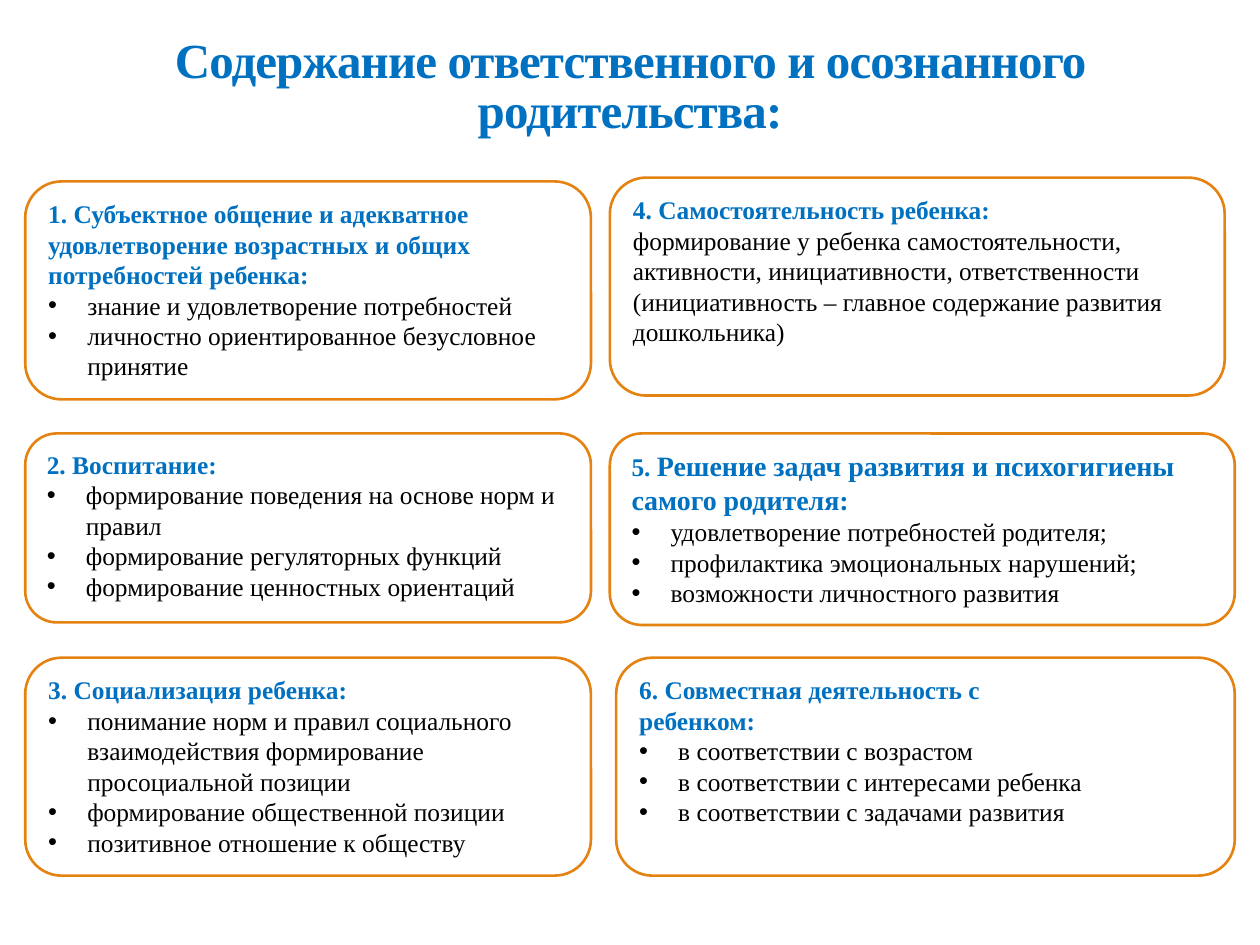
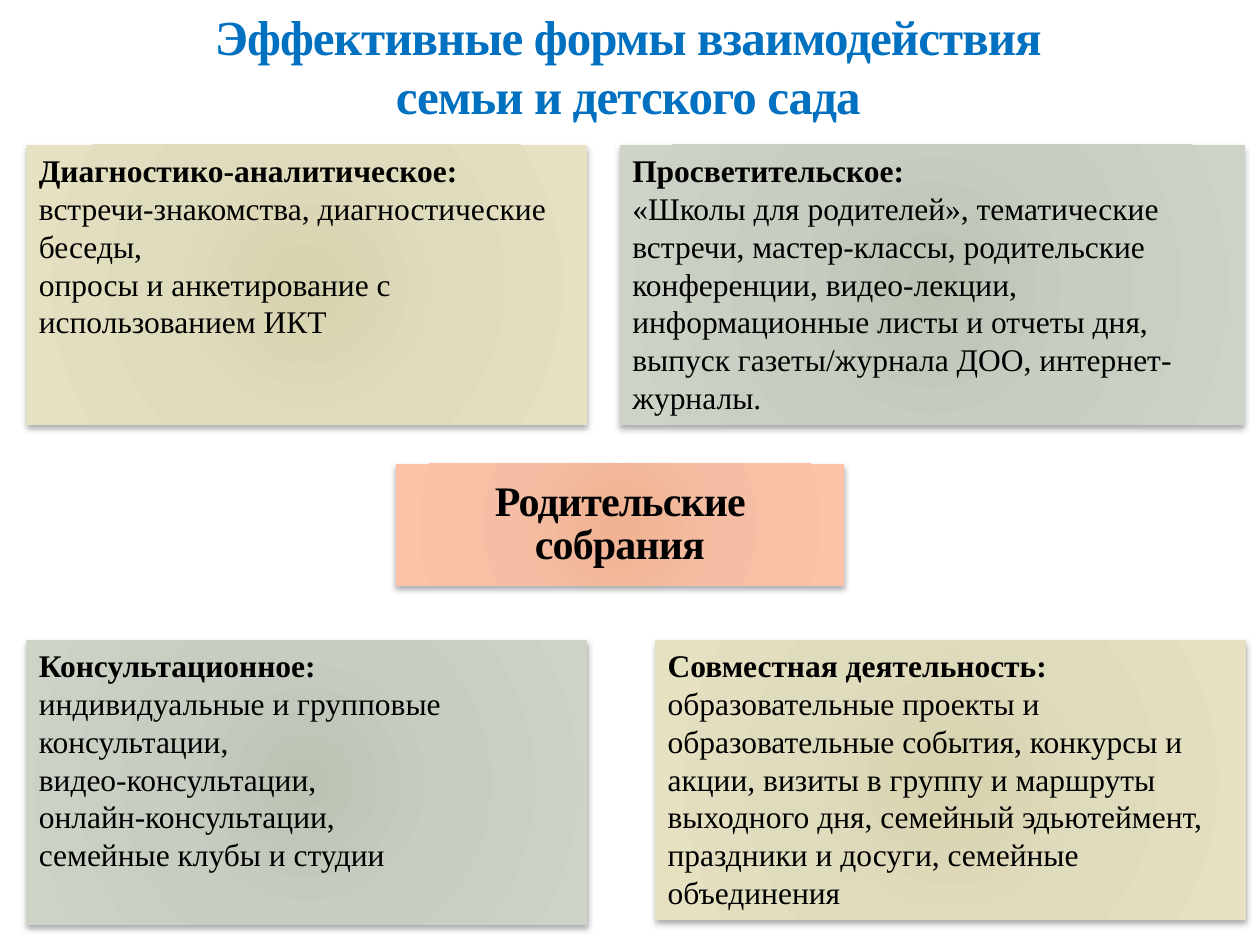
from dataclasses import dataclass

from pptx import Presentation
from pptx.dml.color import RGBColor
from pptx.enum.shapes import MSO_SHAPE
from pptx.enum.text import MSO_ANCHOR, MSO_AUTO_SIZE, PP_ALIGN
from pptx.oxml import parse_xml
from pptx.oxml.ns import nsdecls, qn
from pptx.util import Inches, Pt

RECTANGLE, ROUNDED = MSO_SHAPE.RECTANGLE, MSO_SHAPE.ROUNDED_RECTANGLE
TOP, MIDDLE, BOTTOM = MSO_ANCHOR.TOP, MSO_ANCHOR.MIDDLE, MSO_ANCHOR.BOTTOM
LEFT, CENTER = PP_ALIGN.LEFT, PP_ALIGN.CENTER
TITLE_ONLY = 5


@dataclass(frozen=True)
class Theme:
    font: str = "Times New Roman"
    blue: str = "0070C0"
    black: str = "000000"
    white: str = "FFFFFF"
    orange: str = "E48312"
    # Gradients run from the centre outwards
    sand: tuple = ("D7D3AF", "DFDBBD", "E5E1C1")
    sage: tuple = ("BBC3B5", "C7CDC1", "CDD4C7")
    peach: tuple = ("F0B191", "F5BEA4", "FDC3A8")
    title_size: float = 28
    center_size: float = 24
    form_size: float = 18
    heading_size: float = 16
    card_size: float = 14.5
    tracking: float = -0.5
    tight: float = 0.85


THEME = Theme()

# Content: slide 1
PARENTHOOD_TITLE = ["Содержание ответственного и осознанного родительства:"]
CARDS = [
    {"number": "1. ",
     "heading": ["Субъектное общение и адекватное удовлетворение возрастных "
                 "и общих потребностей ребенка:"],
     "bullets": ["знание и удовлетворение потребностей",
                 "личностно ориентированное безусловное принятие"]},
    {"number": "2. ",
     "heading": ["Воспитание:"],
     "bullets": ["формирование поведения на основе норм и правил",
                 "формирование регуляторных функций",
                 "формирование ценностных ориентаций"]},
    {"number": "3. ",
     "heading": ["Социализация ребенка:"],
     "bullets": ["понимание норм и правил социального взаимодействия "
                 "формирование просоциальной позиции",
                 "формирование общественной позиции",
                 "позитивное отношение к обществу"]},
    {"number": "4. ",
     "heading": ["Самостоятельность ребенка:"],
     "plain": ["формирование у ребенка самостоятельности, активности, "
               "инициативности, ответственности (инициативность – главное "
               "содержание развития дошкольника)"]},
    {"number": "5. ",
     "heading": ["Решение задач развития и психогигиены самого родителя:"],
     "heading_size": THEME.heading_size,
     "bullets": ["удовлетворение потребностей родителя;",
                 "профилактика эмоциональных нарушений;",
                 "возможности личностного развития"]},
    {"number": "6. ",
     "heading": ["Совместная деятельность с", "ребенком:"],
     "bullets": ["в соответствии с возрастом",
                 "в соответствии с интересами ребенка",
                 "в соответствии с задачами развития"]},
]
CARD_PLACES = [
    (0.2, 1.44, 4.49, 1.73), (0.2, 3.44, 4.49, 1.5), (0.2, 5.22, 4.49, 1.73),
    (4.84, 1.41, 4.88, 1.73), (4.84, 3.44, 4.96, 1.52), (4.89, 5.22, 4.91, 1.73),
]

# Content: slide 2
FORMS_TITLE = ["Эффективные формы взаимодействия", "семьи и детского сада"]
MEETINGS = "Родительские собрания"
FORMS = [
    ((0.21, 1.15, 4.45, 2.22), THEME.sand, "Диагностико-аналитическое:",
     ["встречи-знакомства, диагностические беседы,",
      "опросы и анкетирование с использованием ИКТ"]),
    ((4.92, 1.15, 4.96, 2.22), THEME.sage, "Просветительское:",
     ["«Школы для родителей», тематические встречи, мастер-классы, "
      "родительские конференции, видео-лекции, информационные листы и отчеты "
      "дня, выпуск газеты/журнала ДОО, интернет-журналы."]),
    ((5.2, 5.08, 4.69, 2.22), THEME.sand, "Совместная деятельность:",
     ["образовательные проекты и образовательные события, конкурсы и акции, "
      "визиты в группу и маршруты выходного дня, семейный эдьютеймент, "
      "праздники и досуги, семейные объединения"]),
    ((0.21, 5.08, 4.45, 2.26), THEME.sage, "Консультационное:",
     ["индивидуальные и групповые консультации,", "видео-консультации,",
      "онлайн-консультации,", "семейные клубы и студии"]),
]


# Text helpers
def add_span(para, text, size, color, bold=False, tracking=0):
    span = para.add_run()
    span.text = text
    span.font.name = THEME.font
    span.font.size = Pt(size)
    span.font.bold = bold
    span.font.color.rgb = RGBColor.from_string(color)
    if tracking:
        span._r.get_or_add_rPr().set("spc", str(int(tracking * 100)))


def prepare_frame(box, anchor):
    frame = box.text_frame
    frame.word_wrap = True
    frame.auto_size = MSO_AUTO_SIZE.NONE
    frame.vertical_anchor = anchor
    return frame


def new_para(frame, align=LEFT):
    """Return the empty first paragraph, or a further one."""
    first = frame.paragraphs[0]
    para = frame.add_paragraph() if first.runs else first
    para.alignment = align
    return para


def add_bullet(para):
    props = para._p.get_or_add_pPr()
    props.set("marL", str(Inches(0.31)))
    props.set("indent", str(-Inches(0.31)))
    props.append(parse_xml(f'<a:buFont {nsdecls("a")} typeface="Arial"/>'))
    props.append(parse_xml(f'<a:buChar {nsdecls("a")} char="•"/>'))


# Shape helpers
def add_box(page, kind, place):
    box = page.shapes.add_shape(kind, *map(Inches, place))
    box.shadow.inherit = False
    return box


def add_glow_box(page, place, colors):
    """A rectangle with a round gradient and a soft shadow below."""
    box = add_box(page, RECTANGLE, place)
    box.line.fill.background()
    box.fill.gradient()
    stops = "".join(
        f'<a:gs pos="{share * 1000}"><a:srgbClr val="{color}"/></a:gs>'
        for share, color in zip((0, 45, 100), colors))
    gradient = parse_xml(
        f'<a:gradFill {nsdecls("a")} rotWithShape="1"><a:gsLst>{stops}</a:gsLst>'
        '<a:path path="circle"><a:fillToRect l="100000" t="100000" '
        'r="100000" b="100000"/></a:path></a:gradFill>')
    props = box._element.spPr
    props.replace(props.find(qn("a:gradFill")), gradient)
    props.find(qn("a:effectLst")).append(parse_xml(
        f'<a:outerShdw {nsdecls("a")} blurRad="{Pt(3.5)}" dist="{Pt(2.2)}" '
        'dir="5400000" rotWithShape="0">'
        f'<a:srgbClr val="{THEME.black}"><a:alpha val="32000"/></a:srgbClr>'
        '</a:outerShdw>'))
    return box


def add_page(deck, title_lines, place, anchor, spacing):
    page = deck.slides.add_slide(deck.slide_layouts[TITLE_ONLY])
    title = page.shapes.title
    title.left, title.top, title.width, title.height = map(Inches, place)
    frame = prepare_frame(title, anchor)
    for line in title_lines:
        para = new_para(frame, CENTER)
        para.line_spacing = spacing
        para.space_before = Pt(0)
        add_span(para, line, THEME.title_size, THEME.blue, True, THEME.tracking)
    return page


# Slide parts
def add_card(page, place, card):
    box = add_box(page, ROUNDED, place)
    box.fill.solid()
    box.fill.fore_color.rgb = RGBColor.from_string(THEME.white)
    box.line.color.rgb = RGBColor.from_string(THEME.orange)
    box.line.width = Pt(1.5)
    frame = prepare_frame(box, TOP)
    size = card.get("heading_size", THEME.card_size)
    for index, line in enumerate(card["heading"]):
        para = new_para(frame)
        if index == 0:
            add_span(para, card["number"], THEME.card_size, THEME.blue, True)
        add_span(para, line, size, THEME.blue, True)
    for line in card.get("plain", []):
        add_span(new_para(frame), line, THEME.card_size, THEME.black)
    for line in card.get("bullets", []):
        para = new_para(frame)
        add_bullet(para)
        add_span(para, line, THEME.card_size, THEME.black)


def add_form(page, place, colors, heading, lines):
    frame = prepare_frame(add_glow_box(page, place, colors), TOP)
    add_span(new_para(frame), heading, THEME.form_size, THEME.black, True)
    for line in lines:
        add_span(new_para(frame), line, THEME.form_size, THEME.black)


def add_meetings(page):
    box = add_glow_box(page, (3.14, 3.68, 3.56, 0.97), THEME.peach)
    frame = prepare_frame(box, MIDDLE)
    # Side margins keep the two words on separate lines
    frame.margin_left = frame.margin_right = Inches(0.5)
    para = new_para(frame, CENTER)
    para.line_spacing = THEME.tight
    add_span(para, MEETINGS, THEME.center_size, THEME.black, True, THEME.tracking)


def main():
    deck = Presentation()
    deck.slide_width, deck.slide_height = Inches(10), Inches(7.5)

    parenthood = add_page(deck, PARENTHOOD_TITLE, (0.5, 0.17, 9, 0.98),
                          BOTTOM, THEME.tight)
    for place, card in zip(CARD_PLACES, CARDS):
        add_card(parenthood, place, card)

    forms = add_page(deck, FORMS_TITLE, (0.94, 0, 8.09, 1.04), TOP, 1.0)
    add_meetings(forms)
    for form in FORMS:
        add_form(forms, *form)

    deck.save("out.pptx")


if __name__ == "__main__":
    main()
